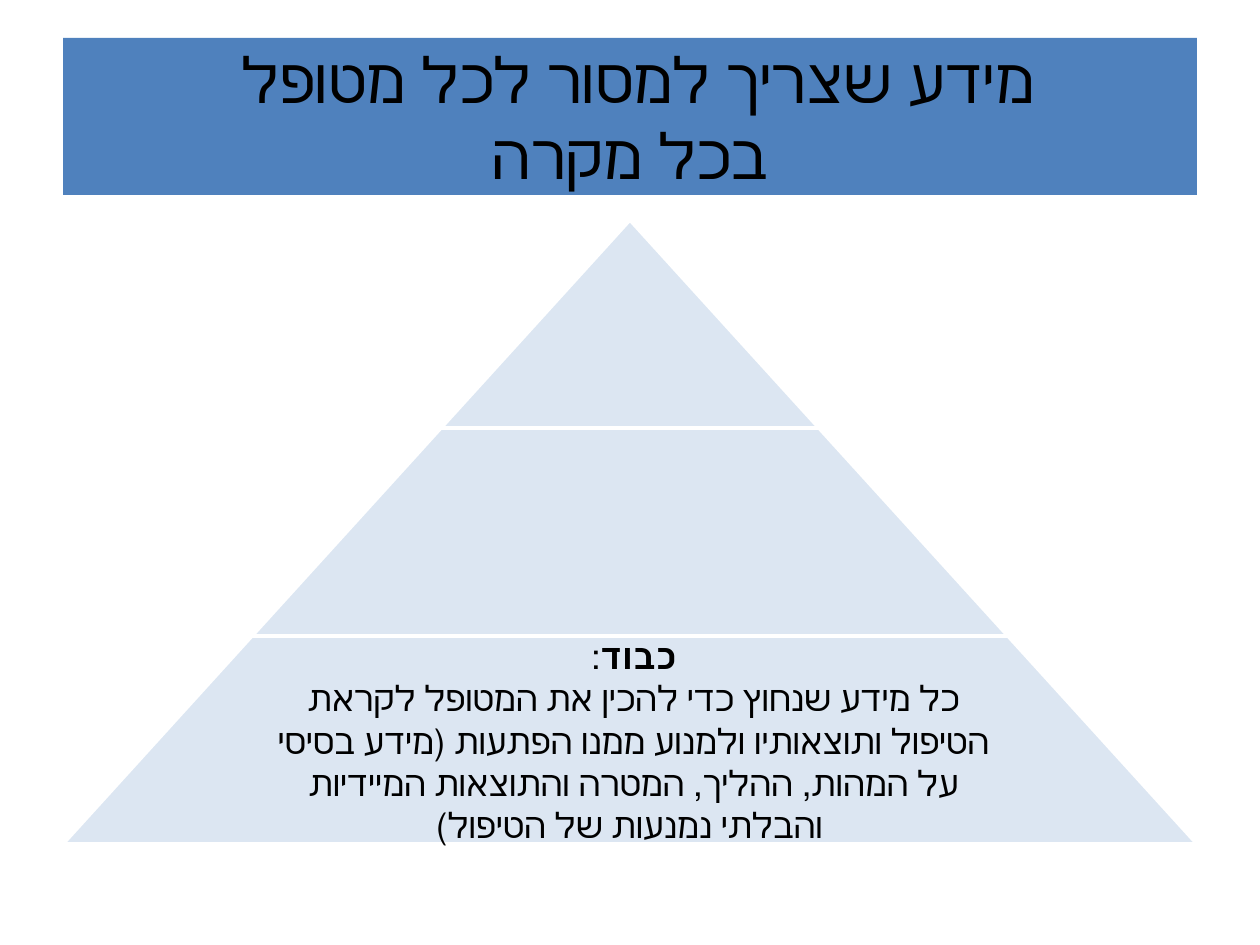
from pptx import Presentation
from pptx.dml.color import RGBColor
from pptx.enum.lang import MSO_LANGUAGE_ID as LANG
from pptx.enum.shapes import MSO_SHAPE as SHAPE
from pptx.enum.text import MSO_ANCHOR as ANCHOR, MSO_AUTO_SIZE as AUTO, PP_ALIGN as ALIGN
from pptx.util import Pt

TITLE = "מידע שצריך למסור לכל מטופל \vבכל מקרה"
HEADING = ("כבוד", ": ")
BODY = [
    "כל מידע שנחוץ כדי להכין את המטופל לקראת ",
    "הטיפול ותוצאותיו ולמנוע ממנו הפתעות (מידע בסיסי ",
    "על המהות, ההליך, המטרה והתוצאות המיידיות ",
    "והבלתי נמנעות של הטיפול)",
]
COLORS = {"title": "4F81BD", "tier": "DCE6F2", "line": "FFFFFF", "text": "000000"}

PX = 914400 // 126
SLIDE_W, SLIDE_H = 1260, 945
TITLE_BOX = (63, 38, 1134, 157)
TIERS, TIER_TOP, TIER_STEP, TIER_H = 3, 220, 378, 208
TEXT_W, TEXT_INSET = 737, 3


def emu(*lengths):
    return [n * PX for n in lengths]


def rgb(name):
    return RGBColor.from_string(COLORS[name])


def fill(shape, name):
    shape.fill.solid()
    shape.fill.fore_color.rgb = rgb(name)


def format_rtl(p, font, size):
    """Centre a right-to-left Hebrew paragraph and set the font of its runs."""
    p.alignment = ALIGN.CENTER
    p._p.get_or_add_pPr().set("rtl", "1")
    for r in p.runs:
        r.font.name, r.font.size = font, Pt(size)
        r.font.color.rgb = rgb("text")
        r.font.language_id = LANG.HEBREW


prs = Presentation()
prs.slide_width, prs.slide_height = emu(SLIDE_W, SLIDE_H)
s = prs.slides.add_slide(prs.slide_layouts[5])

title = s.shapes.title
title.left, title.top, title.width, title.height = emu(*TITLE_BOX)
fill(title, "title")
tf = title.text_frame
tf.text = TITLE
tf.auto_size, tf.vertical_anchor = AUTO.NONE, ANCHOR.MIDDLE
format_rtl(tf.paragraphs[0], "Calibri", 36)

for i in range(TIERS):
    width, top = TIER_STEP * (i + 1), TIER_TOP + TIER_H * i
    tier = s.shapes.add_shape(
        SHAPE.TRAPEZOID, *emu((SLIDE_W - width) // 2, top, width, TIER_H))
    tier.adjustments[0] = TIER_STEP / 2 / TIER_H
    tier.shadow.inherit = False
    fill(tier, "tier")
    tier.line.color.rgb = rgb("line")
    tier.line.width = Pt(2)

# The text belongs to the lowest tier, the last one placed
box = s.shapes.add_textbox(*emu((SLIDE_W - TEXT_W) // 2, top, TEXT_W, TIER_H))
tf = box.text_frame
tf.word_wrap, tf.vertical_anchor = False, ANCHOR.MIDDLE
tf.margin_left = tf.margin_right = tf.margin_top = tf.margin_bottom = TEXT_INSET * PX
tf.text = "\n".join(["", *BODY])
heading = tf.paragraphs[0]
for text, bold in zip(HEADING, (True, False)):
    r = heading.add_run()
    r.text, r.font.bold = text, bold
for p in tf.paragraphs:
    format_rtl(p, "Arial", 20)

prs.save("out.pptx")
